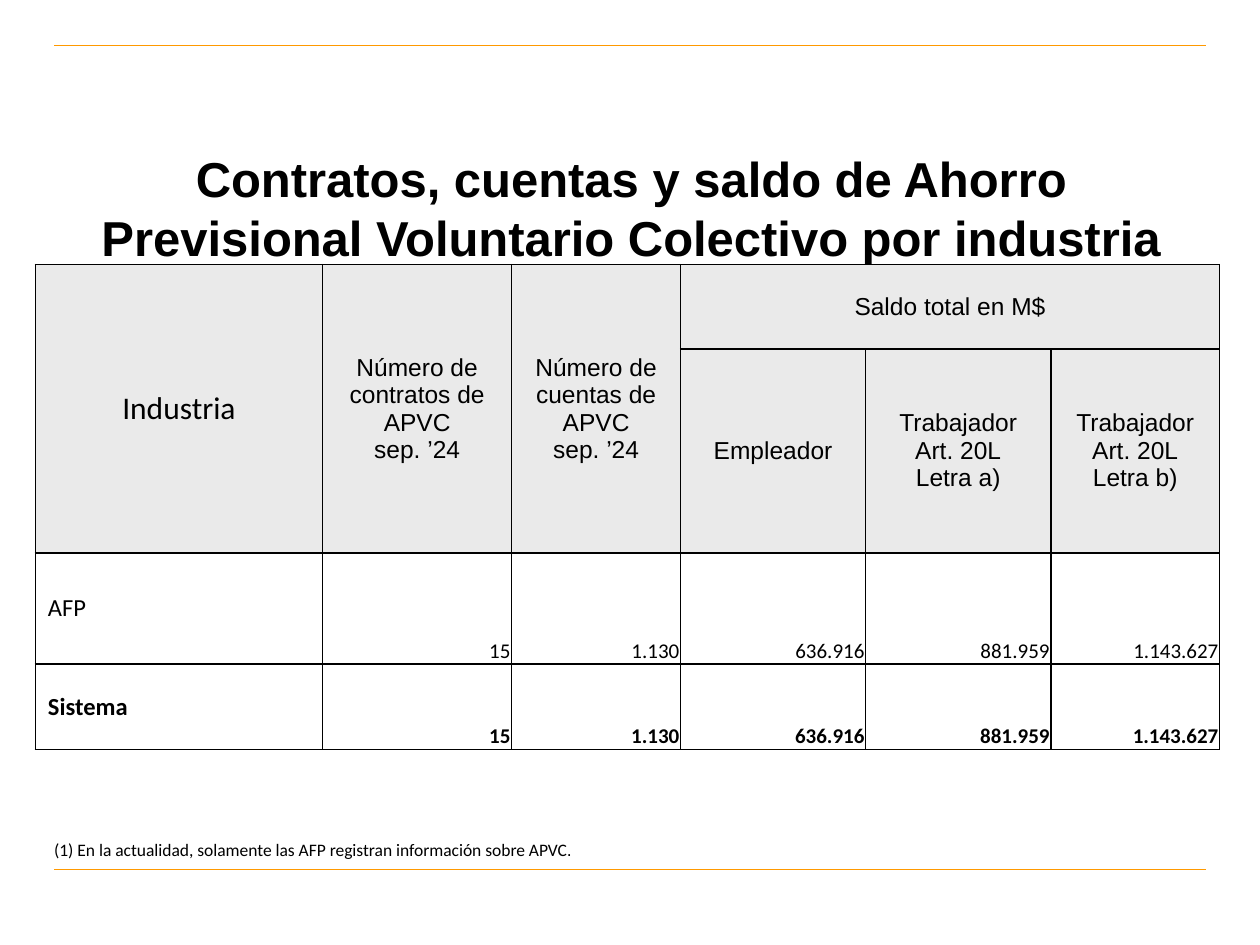
"""Build the slide on collective voluntary pension savings by industry."""
import lxml.etree
import pptx
import pptx.util
import pptx.dml.color
import pptx.enum.shapes
import pptx.enum.text
import pptx.oxml.ns

Pt = pptx.util.Pt
ALIGN = pptx.enum.text.PP_ALIGN
ANCHOR = pptx.enum.text.MSO_ANCHOR
COLORS = {"text": "000000", "rule": "FF9900", "header": "EAEAEA", "body": "FFFFFF"}
COLUMN_WIDTHS = [164.2, 108, 96.5, 105.8, 105.8, 96.5]
ROW_HEIGHTS = [48.2, 116.6, 63.4, 49]
HEADERS = {
    (0, 0): "Industria",
    (0, 1): "Número de contratos de APVC\nsep. ’24",
    (0, 2): "Número de cuentas de APVC\nsep. ’24",
    (0, 3): "Saldo total en M$",
    (1, 3): "Empleador",
    (1, 4): "Trabajador\nArt. 20L\nLetra a)",
    (1, 5): "Trabajador\nArt. 20L\nLetra b)",
}
MERGES = [((0, column), (1, column)) for column in range(3)] + [((0, 3), (0, 5))]
VALUES = ["15", "1.130", "636.916", "881.959", "1.143.627"]
BODY = {2: ["AFP"] + VALUES, 3: ["Sistema"] + VALUES}
HEADER_FORMAT = {"name": "Arial", "size": Pt(14), "bold": False}
INDUSTRY_FORMAT = {"name": "Calibri", "size": Pt(18), "bold": False}
LABEL_FORMAT = {"name": "Calibri", "size": Pt(14)}
VALUE_FORMAT = {"name": "Calibri", "size": Pt(12)}
TITLE_FORMAT = {"name": "Arial", "size": Pt(28), "bold": True}
NOTE_FORMAT = {"name": "Calibri", "size": Pt(10)}
VALUE_MARGINS = {"margin_left": Pt(0.72), "margin_right": Pt(0.72),
                 "margin_top": Pt(0.72), "margin_bottom": 0}


def rgb(name):
    """Return the named colour."""
    return pptx.dml.color.RGBColor.from_string(COLORS[name])


def set_attributes(target, values):
    """Set each attribute of the target from a dict."""
    for name, value in values.items():
        setattr(target, name, value)


def format_font(font, values):
    """Apply font values and the text colour."""
    set_attributes(font, values)
    font.color.rgb = rgb("text")


def write_text(text_frame, text, font_values, alignment):
    """Write one formatted paragraph per line of text."""
    text_frame.text = text
    for paragraph in text_frame.paragraphs:
        paragraph.alignment = alignment
        for run in paragraph.runs:
            format_font(run.font, font_values)


def add_rule(slide, top):
    """Add a horizontal rule across the slide."""
    connector = slide.shapes.add_connector(
        pptx.enum.shapes.MSO_CONNECTOR.STRAIGHT, Pt(31), Pt(top), Pt(689), Pt(top))
    connector.line.color.rgb = rgb("rule")
    connector.line.width = Pt(0.75)
    properties = connector._element.spPr
    lxml.etree.SubElement(properties, pptx.oxml.ns.qn("a:effectLst"))


def add_title(slide, text):
    """Place and format the title placeholder."""
    title = slide.shapes.title
    set_attributes(title, {"left": Pt(36.7), "top": Pt(83.5),
                           "width": Pt(648), "height": Pt(90)})
    set_attributes(title.text_frame, {"vertical_anchor": ANCHOR.MIDDLE, "word_wrap": True,
                                      "margin_bottom": Pt(24)})
    write_text(title.text_frame, text, TITLE_FORMAT, ALIGN.CENTER)


def add_borders(cell):
    """Draw a solid line on every side of the cell."""
    properties = cell._tc.get_or_add_tcPr()
    for side in ("lnL", "lnR", "lnT", "lnB"):
        line = lxml.etree.SubElement(properties, pptx.oxml.ns.qn(f"a:{side}"), w=str(Pt(1)))
        fill = lxml.etree.SubElement(line, pptx.oxml.ns.qn("a:solidFill"))
        lxml.etree.SubElement(fill, pptx.oxml.ns.qn("a:srgbClr"), val=COLORS["text"])


def fill_cell(cell, color):
    """Border the cell, centre it vertically and fill it."""
    add_borders(cell)
    cell.vertical_anchor = ANCHOR.MIDDLE
    cell.fill.solid()
    cell.fill.fore_color.rgb = rgb(color)


def add_savings_table(slide):
    """Add the table of contracts, accounts and balances."""
    frame = slide.shapes.add_table(
        len(ROW_HEIGHTS), len(COLUMN_WIDTHS), Pt(20.2), Pt(151.2),
        Pt(sum(COLUMN_WIDTHS)), Pt(sum(ROW_HEIGHTS)))
    table = frame.table
    set_attributes(table, {"first_row": False, "horz_banding": False})
    for column, width in zip(table.columns, COLUMN_WIDTHS):
        column.width = Pt(width)
    for row, height in zip(table.rows, ROW_HEIGHTS):
        row.height = Pt(height)
    for start, end in MERGES:
        table.cell(*start).merge(table.cell(*end))
    for row in range(len(ROW_HEIGHTS)):
        for column in range(len(COLUMN_WIDTHS)):
            fill_cell(table.cell(row, column), "body" if row in BODY else "header")
    for (row, column), text in HEADERS.items():
        font_values = HEADER_FORMAT if column else INDUSTRY_FORMAT
        write_text(table.cell(row, column).text_frame, text, font_values, ALIGN.CENTER)
    for row, (label, *values) in BODY.items():
        bold = {"bold": label == "Sistema"}
        write_text(table.cell(row, 0).text_frame, label, LABEL_FORMAT | bold, ALIGN.LEFT)
        for column, value in enumerate(values, start=1):
            cell = table.cell(row, column)
            set_attributes(cell, VALUE_MARGINS | {"vertical_anchor": ANCHOR.BOTTOM})
            write_text(cell.text_frame, value, VALUE_FORMAT | bold, ALIGN.RIGHT)


def add_note(slide, text):
    """Add the footnote, ending in an Arial full stop."""
    box = slide.shapes.add_textbox(Pt(23.8), Pt(475.9), Pt(677.5), Pt(19.4))
    box.text_frame.word_wrap = True
    write_text(box.text_frame, text, NOTE_FORMAT, ALIGN.LEFT)
    stop = box.text_frame.paragraphs[0].add_run()
    stop.text = "."
    format_font(stop.font, NOTE_FORMAT | {"name": "Arial"})


def main():
    """Build and save the presentation."""
    presentation = pptx.Presentation()
    set_attributes(presentation, {"slide_width": Pt(720), "slide_height": Pt(540)})
    slide = presentation.slides.add_slide(presentation.slide_layouts[5])
    for top in (26, 496.8):
        add_rule(slide, top)
    add_title(slide, "Contratos, cuentas y saldo de Ahorro Previsional "
                     "Voluntario Colectivo por industria")
    add_savings_table(slide)
    add_note(slide, "(1) En la actualidad, solamente las AFP registran información sobre APVC")
    presentation.save("out.pptx")


if __name__ == "__main__":
    main()
